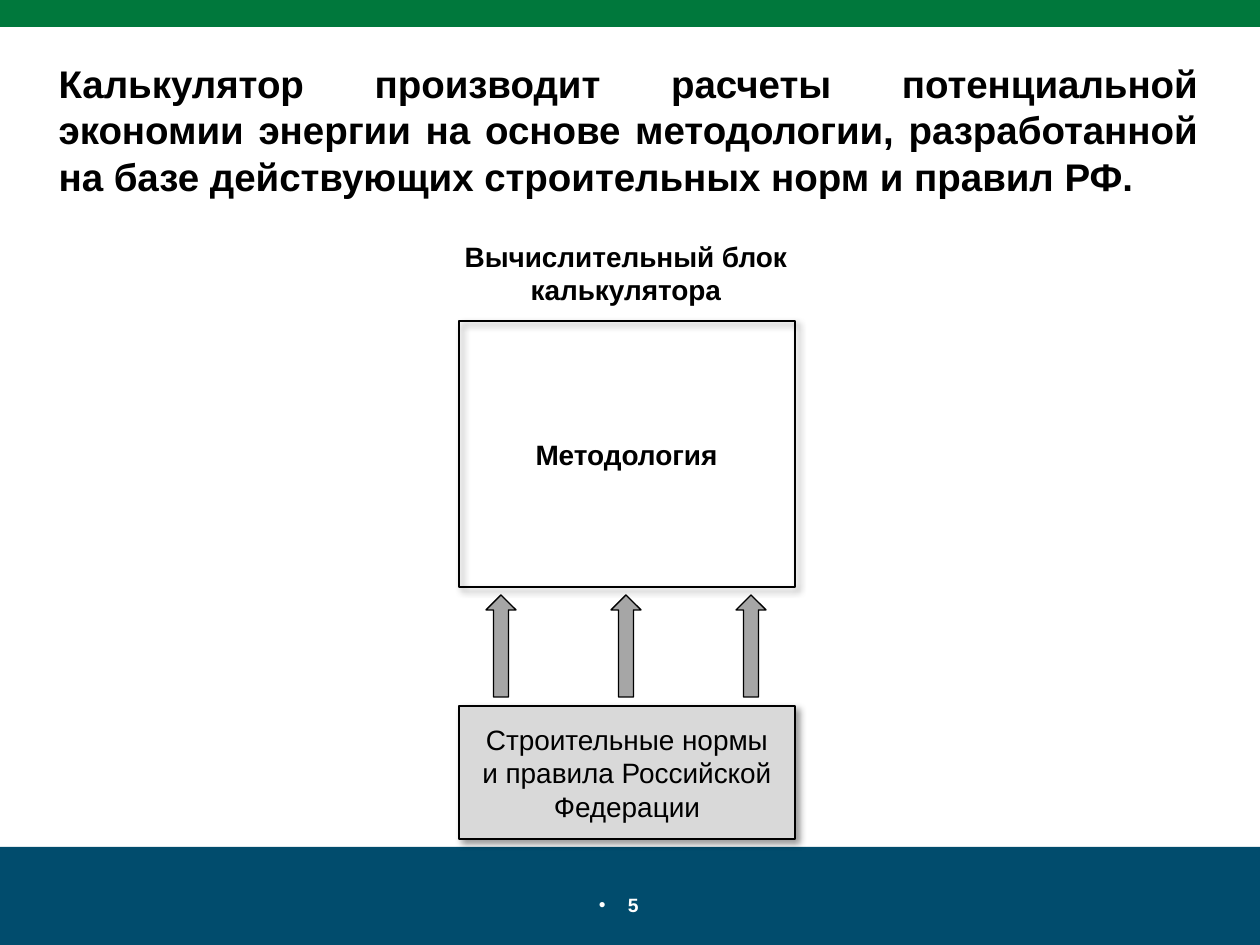
"""Build the slide on the methodology behind the energy savings calculator."""

from dataclasses import dataclass

from lxml.etree import SubElement
from pptx import Presentation
from pptx.dml.color import RGBColor
from pptx.enum.shapes import MSO_SHAPE as Shape
from pptx.enum.text import MSO_ANCHOR as Anchor, MSO_AUTO_SIZE as AutoSize, PP_ALIGN as Align
from pptx.oxml.ns import qn
from pptx.util import Emu, Pt

EMU_PER_PX = 914400 / 126


@dataclass(frozen=True)
class Theme:
    """Colours, type sizes and line widths."""

    font: str = "Arial"
    black: str = "000000"
    white: str = "FFFFFF"
    green: str = "00783C"
    blue: str = "014C6D"
    pale_grey: str = "D9D9D9"
    mid_grey: str = "A6A6A6"
    title_size: int = 22
    label_size: int = 16
    number_size: int = 11
    box_line: float = 1.25
    arrow_line: float = 0.75


THEME = Theme()


def px(length):
    """Turn pixels into EMU."""
    return Emu(round(length * EMU_PER_PX))


def add_figure(slide, kind, bounds, fill=None, line_width=None):
    """Add a preset shape with an optional fill and outline."""
    shape = slide.shapes.add_shape(kind, *map(px, bounds))
    shape.shadow.inherit = False
    if fill:
        shape.fill.solid()
        shape.fill.fore_color.rgb = RGBColor.from_string(fill)
    else:
        shape.fill.background()
    if line_width:
        shape.line.color.rgb = RGBColor.from_string(THEME.black)
        shape.line.width = Pt(line_width)
    else:
        shape.line.fill.background()
    return shape


def add_shadow(shape):
    """Give a shape a soft shadow towards the lower right."""
    effects = shape.element.spPr.find(qn("a:effectLst"))
    shadow = SubElement(effects, qn("a:outerShdw"), blurRad=str(Pt(4)), dist=str(Pt(3)),
                        dir="2700000", algn="tl", rotWithShape="0")
    color = SubElement(shadow, qn("a:srgbClr"), val=THEME.black)
    SubElement(color, qn("a:alpha"), val="40000")


def add_box(slide, bounds, fill=None):
    """Add an outlined box with a shadow."""
    add_shadow(add_figure(slide, Shape.RECTANGLE, bounds, fill, THEME.box_line))


def write(frame, text, size, color=THEME.black, bold=True, align=Align.CENTER):
    """Write one formatted run into a text frame."""
    frame.word_wrap = True
    frame.auto_size = AutoSize.NONE
    paragraph = frame.paragraphs[0]
    paragraph.alignment = align
    run = paragraph.add_run()
    run.text = text
    run.font.name = THEME.font
    run.font.size = Pt(size)
    run.font.bold = bold
    run.font.color.rgb = RGBColor.from_string(color)


def add_label(slide, bounds, text, bold=True):
    """Add a centred label."""
    frame = slide.shapes.add_textbox(*map(px, bounds)).text_frame
    write(frame, text, THEME.label_size, bold=bold)


def set_title(slide, bounds, text):
    """Place the title placeholder and fill it."""
    title = slide.shapes.title
    title.left, title.top, title.width, title.height = map(px, bounds)
    title.text_frame.vertical_anchor = Anchor.MIDDLE
    write(title.text_frame, text, THEME.title_size, align=Align.JUSTIFY)


def add_page_number(slide, bounds, text):
    """Add the bulleted page number."""
    frame = slide.shapes.add_textbox(*map(px, bounds)).text_frame
    frame.margin_right = px(35)
    properties = frame.paragraphs[0]._p.get_or_add_pPr()
    properties.set("marL", str(px(29)))
    properties.set("indent", str(-px(29)))
    SubElement(properties, qn("a:buFont"), typeface=THEME.font)
    SubElement(properties, qn("a:buChar"), char="•")
    write(frame, text, THEME.number_size, THEME.white)


def add_arrows(slide, left, top, step, count):
    """Add a row of evenly spaced upward arrows."""
    for index in range(count):
        bounds = (left + index * step, top, 30, 102)
        add_figure(slide, Shape.UP_ARROW, bounds, THEME.mid_grey, THEME.arrow_line)


def main():
    """Build and save the presentation."""
    presentation = Presentation()
    presentation.slide_width, presentation.slide_height = px(1260), px(945)
    slide = presentation.slides.add_slide(presentation.slide_layouts[5])
    add_figure(slide, Shape.RECTANGLE, (0, 847, 1260, 98), THEME.blue)
    add_figure(slide, Shape.RECTANGLE, (0, 0, 1260, 27), THEME.green)
    set_title(slide, (46, 53, 1165, 153),
              "Калькулятор производит расчеты потенциальной экономии энергии на основе "
              "методологии, разработанной на базе действующих строительных норм и правил РФ.")
    add_label(slide, (436, 233, 380, 81), "Вычислительный блок калькулятора")
    add_box(slide, (459, 321, 336, 266))
    add_label(slide, (511, 431, 231, 46), "Методология")
    add_arrows(slide, left=486, top=595, step=125, count=3)
    add_box(slide, (459, 706, 336, 133), THEME.pale_grey)
    add_label(slide, (463, 716, 328, 115),
              "Строительные нормы и правила Российской Федерации", bold=False)
    add_page_number(slide, (500, 887, 260, 39), "5")
    presentation.save("out.pptx")


if __name__ == "__main__":
    main()
